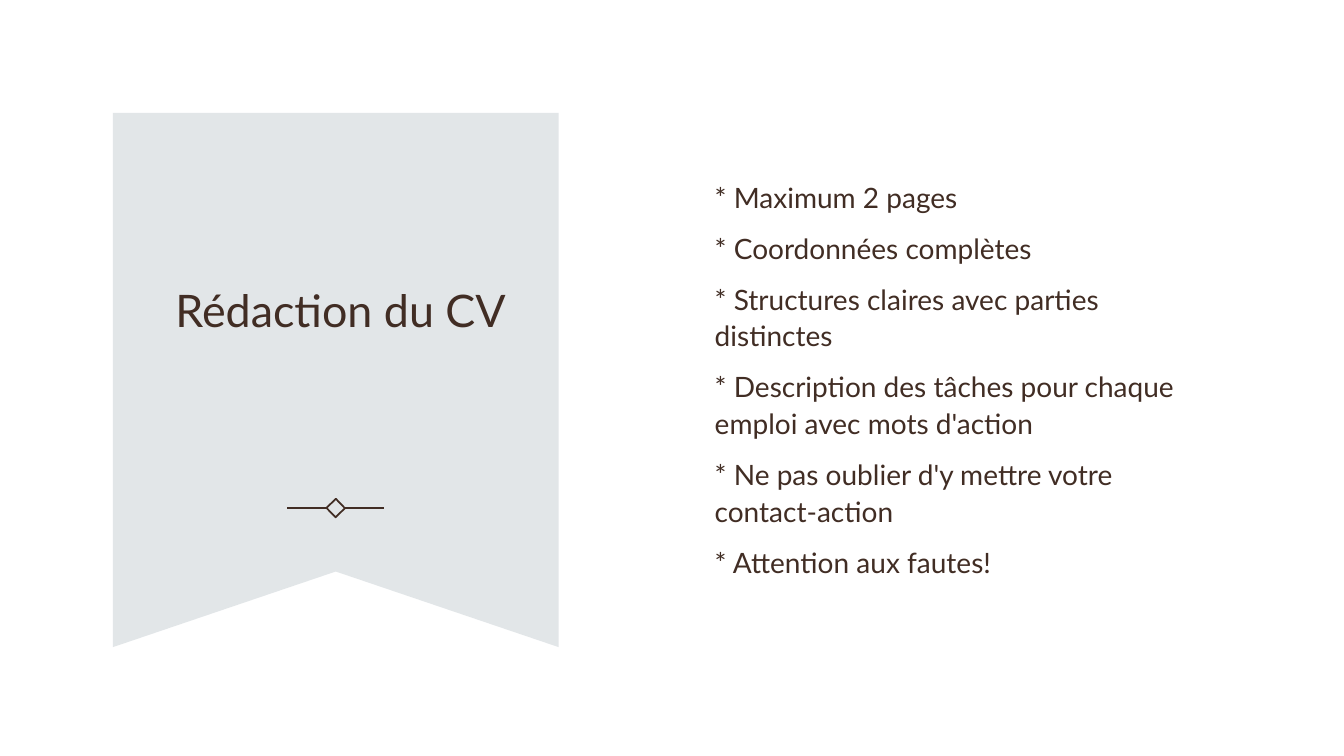
"""Build the slide about writing a CV: a ribbon with the title beside a list of tips."""
import pptx
import pptx.dml.color
import pptx.enum.shapes
import pptx.enum.text
import pptx.oxml
import pptx.oxml.ns
import pptx.util
from pptx.util import Inches

FONT = "Lato"
BROWN = "412D24"
GREY = "E2E6E8"
TIPS = [
    "* Maximum 2 pages",
    "* Coordonnées complètes",
    "* Structures claires avec parties distinctes",
    "* Description des tâches pour chaque emploi avec mots d'action",
    "* Ne pas oublier d'y mettre votre contact-action",
    "* Attention aux fautes!",
]


def color(value):
    """Turn a hex string into a colour."""
    return pptx.dml.color.RGBColor.from_string(value)


def style_line(line):
    """Give an ornament stroke its colour and width."""
    line.color.rgb = color(BROWN)
    line.width = pptx.util.Pt(1.25)


def add_ribbon(slide, left, top, width, height, notch):
    """Add a ribbon whose lower edge is notched in the middle."""
    right, bottom = left + width, top + height
    builder = slide.shapes.build_freeform(Inches(left), Inches(top))
    corners = [(right, top), (right, bottom), (left + width / 2, bottom - notch), (left, bottom)]
    builder.add_line_segments([(Inches(x), Inches(y)) for x, y in corners], close=True)
    ribbon = builder.convert_to_shape()
    ribbon.shadow.inherit = False
    ribbon.fill.solid()
    ribbon.fill.fore_color.rgb = color(GREY)
    ribbon.line.fill.background()


def add_stroke(slide, start, end, y):
    """Add a horizontal line of the ornament."""
    connector = slide.shapes.add_connector(
        pptx.enum.shapes.MSO_CONNECTOR.STRAIGHT, Inches(start), Inches(y), Inches(end), Inches(y))
    style_line(connector.line)
    properties = connector._element.spPr
    properties.append(pptx.oxml.parse_xml(f"<a:effectLst {pptx.oxml.ns.nsdecls('a')}/>"))


def add_ornament(slide, center, y):
    """Add a turned square with a line on either side."""
    side, near, far = 0.13, 0.09, 0.48
    square = slide.shapes.add_shape(
        pptx.enum.shapes.MSO_SHAPE.RECTANGLE,
        Inches(center - side / 2), Inches(y - side / 2), Inches(side), Inches(side))
    square.rotation = 316
    square.shadow.inherit = False
    square.fill.background()
    style_line(square.line)
    add_stroke(slide, center + near, center + far, y)
    add_stroke(slide, center - far, center - near, y)


def add_text(slide, box, lines, size, alignment, space_before=0):
    """Add a vertically centred text box with one paragraph per line."""
    shape = slide.shapes.add_textbox(*map(Inches, box))
    text_frame = shape.text_frame
    text_frame.word_wrap = True
    text_frame.vertical_anchor = pptx.enum.text.MSO_ANCHOR.MIDDLE
    text_frame.text = "\n".join(lines)
    for paragraph in text_frame.paragraphs:
        paragraph.alignment = alignment
        paragraph.line_spacing = 1.1
        paragraph.space_before = pptx.util.Pt(space_before)
        for run in paragraph.runs:
            run.font.name = FONT
            run.font.size = pptx.util.Pt(size)
            run.font.color.rgb = color(BROWN)


def main():
    """Compose and save the slide."""
    presentation = pptx.Presentation()
    presentation.slide_width = Inches(13.33)
    presentation.slide_height = Inches(7.5)
    slide = presentation.slides.add_slide(presentation.slide_layouts[6])
    align = pptx.enum.text.PP_ALIGN
    add_ribbon(slide, 1.12, 1.12, 4.42, 5.3, 0.75)
    add_ornament(slide, 3.33, 5.04)
    add_text(slide, (1.54, 1.48, 3.68, 3.14), ["Rédaction du CV"], 32, align.CENTER)
    add_text(slide, (6.99, 0.79, 5.18, 5.92), TIPS, 20, align.LEFT, space_before=10)
    presentation.save("out.pptx")


if __name__ == "__main__":
    main()
